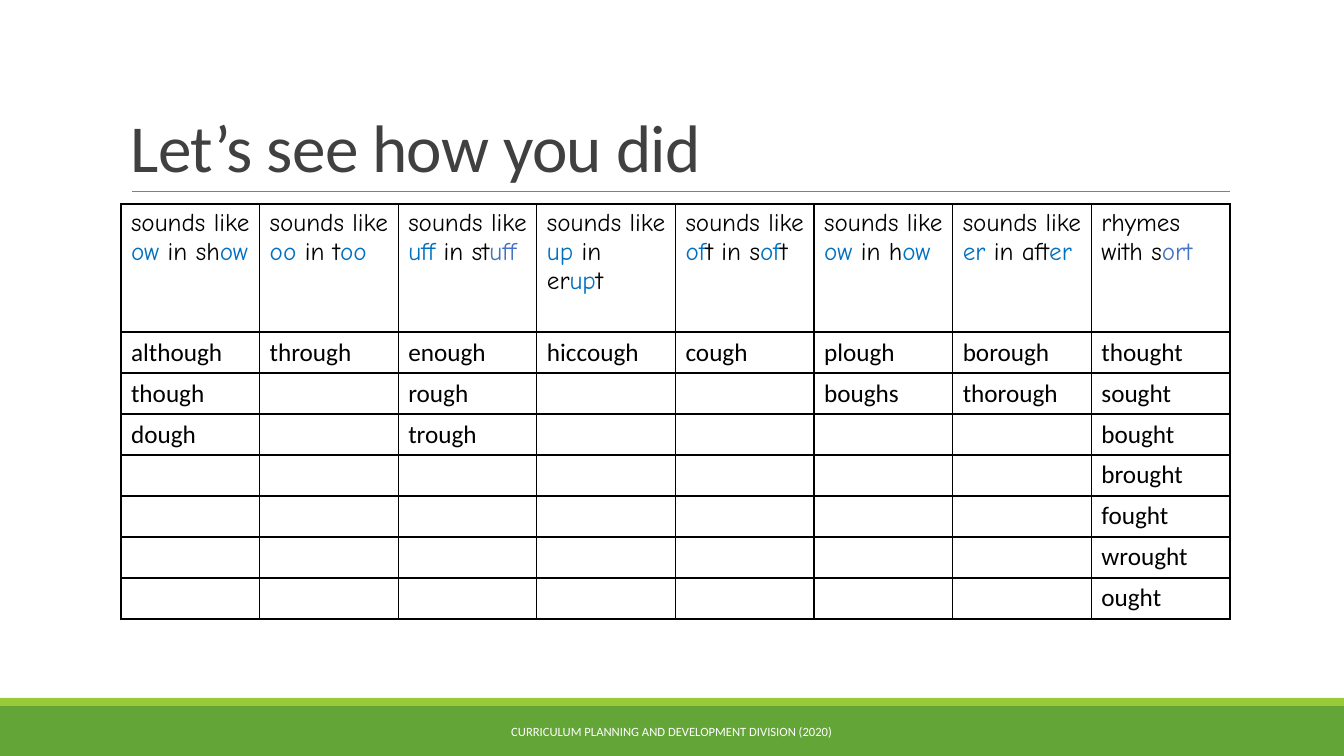
from lxml import etree
from pptx import Presentation, util as u
from pptx.dml.color import RGBColor
from pptx.enum import shapes, text
from pptx.oxml import ns

PX_PER_INCH = 100.8
SLIDE_WIDTH, SLIDE_HEIGHT = 1344, 756

BLACK = RGBColor(0x00, 0x00, 0x00)
WHITE = RGBColor(0xFF, 0xFF, 0xFF)
TITLE_GREY = RGBColor(0x40, 0x40, 0x40)
RULE_GREY = RGBColor(0x80, 0x80, 0x80)
GREEN = RGBColor(0x63, 0xA5, 0x37)
LIME = RGBColor(0x99, 0xCB, 0x38)
BLUE = RGBColor(0x00, 0x70, 0xC0)
INDIGO = RGBColor(0x44, 0x72, 0xC4)

TITLE_FONT = {"name": "Calibri", "size": u.Pt(48), "color": TITLE_GREY}
HEADING_FONT = {"name": "Comic Neue", "size": u.Pt(18), "color": BLACK}
WORD_FONT = {"name": "Calibri", "size": u.Pt(18), "color": BLACK}
FOOTER_FONT = {"name": "Calibri", "size": u.Pt(9), "color": WHITE}

TABLE_LEFT, TABLE_TOP, TABLE_WIDTH = 121, 204, 1109
HEADING_HEIGHT, ROW_HEIGHT = 128, 41

# Heading pieces alternate between plain text and a highlighted sound.
SOUND_COLUMNS = [
    (["sounds like ", "ow", " in sh", "ow"], [BLUE, BLUE],
     ["although", "though", "dough"]),
    (["sounds like ", "oo", " in t", "oo"], [BLUE, BLUE],
     ["through"]),
    (["sounds like ", "uff", " in st", "uff"], [BLUE, INDIGO],
     ["enough", "rough", "trough"]),
    (["sounds like ", "up", " in er", "up", "t"], [BLUE, BLUE],
     ["hiccough"]),
    (["sounds like ", "of", "t in s", "of", "t"], [BLUE, BLUE],
     ["cough"]),
    (["sounds like ", "ow", " in h", "ow"], [BLUE, BLUE],
     ["plough", "boughs"]),
    (["sounds like ", "er", " in aft", "er"], [BLUE, BLUE],
     ["borough", "thorough"]),
    (["rhymes with s", "ort"], [INDIGO],
     ["thought", "sought", "bought", "brought", "fought", "wrought", "ought"]),
]


def px(length):
    return u.Emu(round(length * 914400 / PX_PER_INCH))


def add_run(paragraph, wording, font_format):
    run = paragraph.add_run()
    run.text = wording
    for name, value in font_format.items():
        if name == "color":
            run.font.color.rgb = value
        else:
            setattr(run.font, name, value)
    return run


def add_band(slide, top, height, color):
    """Add a filled strip across the whole slide."""
    band = slide.shapes.add_shape(
        shapes.MSO_SHAPE.RECTANGLE, 0, px(top), px(SLIDE_WIDTH), px(height))
    band.shadow.inherit = False
    band.fill.solid()
    band.fill.fore_color.rgb = color
    band.line.fill.background()


def add_rule(slide, left, right, top):
    rule = slide.shapes.add_connector(
        shapes.MSO_CONNECTOR.STRAIGHT, px(left), px(top), px(right), px(top))
    rule.line.color.rgb = RULE_GREY
    rule.line.width = u.Pt(0.5)
    etree.SubElement(rule._element.spPr, ns.qn("a:effectLst"))


def add_text(slide, box, wording, font_format, anchor, paragraph_format):
    frame = slide.shapes.add_textbox(*map(px, box)).text_frame
    frame.word_wrap = True
    frame.vertical_anchor = anchor
    paragraph = frame.paragraphs[0]
    for name, value in paragraph_format.items():
        setattr(paragraph, name, value)
    return add_run(paragraph, wording, font_format)


def style_cell(cell):
    """Clear the fill and draw a thin black border on all four sides."""
    cell.fill.background()
    properties = cell._tc.get_or_add_tcPr()
    for position, side in enumerate("LRTB"):
        border = etree.Element(ns.qn(f"a:ln{side}"), w=str(u.Pt(1)))
        fill = etree.SubElement(border, ns.qn("a:solidFill"))
        etree.SubElement(fill, ns.qn("a:srgbClr"), val=str(BLACK))
        properties.insert(position, border)


def fill_heading(cell, pieces, sound_colors):
    paragraph = cell.text_frame.paragraphs[0]
    colors = iter(sound_colors)
    for index, piece in enumerate(pieces):
        color = next(colors) if index % 2 else BLACK
        add_run(paragraph, piece, {**HEADING_FONT, "color": color})


def add_sound_table(slide):
    word_rows = max(len(words) for _, _, words in SOUND_COLUMNS)
    height = HEADING_HEIGHT + word_rows * ROW_HEIGHT
    table = slide.shapes.add_table(
        word_rows + 1, len(SOUND_COLUMNS), px(TABLE_LEFT), px(TABLE_TOP),
        px(TABLE_WIDTH), px(height)).table
    table.first_row = table.horz_banding = False
    for index, row in enumerate(table.rows):
        row.height = px(ROW_HEIGHT if index else HEADING_HEIGHT)
    for cell in table.iter_cells():
        style_cell(cell)
    for column, (pieces, colors, words) in enumerate(SOUND_COLUMNS):
        fill_heading(table.cell(0, column), pieces, colors)
        for row, word in enumerate(words, start=1):
            paragraph = table.cell(row, column).text_frame.paragraphs[0]
            add_run(paragraph, word, WORD_FONT)


def main():
    presentation = Presentation()
    presentation.slide_width = px(SLIDE_WIDTH)
    presentation.slide_height = px(SLIDE_HEIGHT)
    slide = presentation.slides.add_slide(presentation.slide_layouts[6])

    add_band(slide, 706, 50, GREEN)
    add_band(slide, 698, 8, LIME)
    add_rule(slide, 132, 1230, 191)
    title = add_text(slide, (121, 31, 1109, 160), "Let’s see how you did",
                     TITLE_FONT, text.MSO_ANCHOR.BOTTOM, {"line_spacing": 0.85})
    title.font._element.set("spc", "-50")
    add_sound_table(slide)
    add_text(slide, (406, 712, 531, 40),
             "CURRICULUM PLANNING AND DEVELOPMENT DIVISION (2020)",
             FOOTER_FONT, text.MSO_ANCHOR.MIDDLE,
             {"alignment": text.PP_ALIGN.CENTER})
    presentation.save("out.pptx")


if __name__ == "__main__":
    main()
